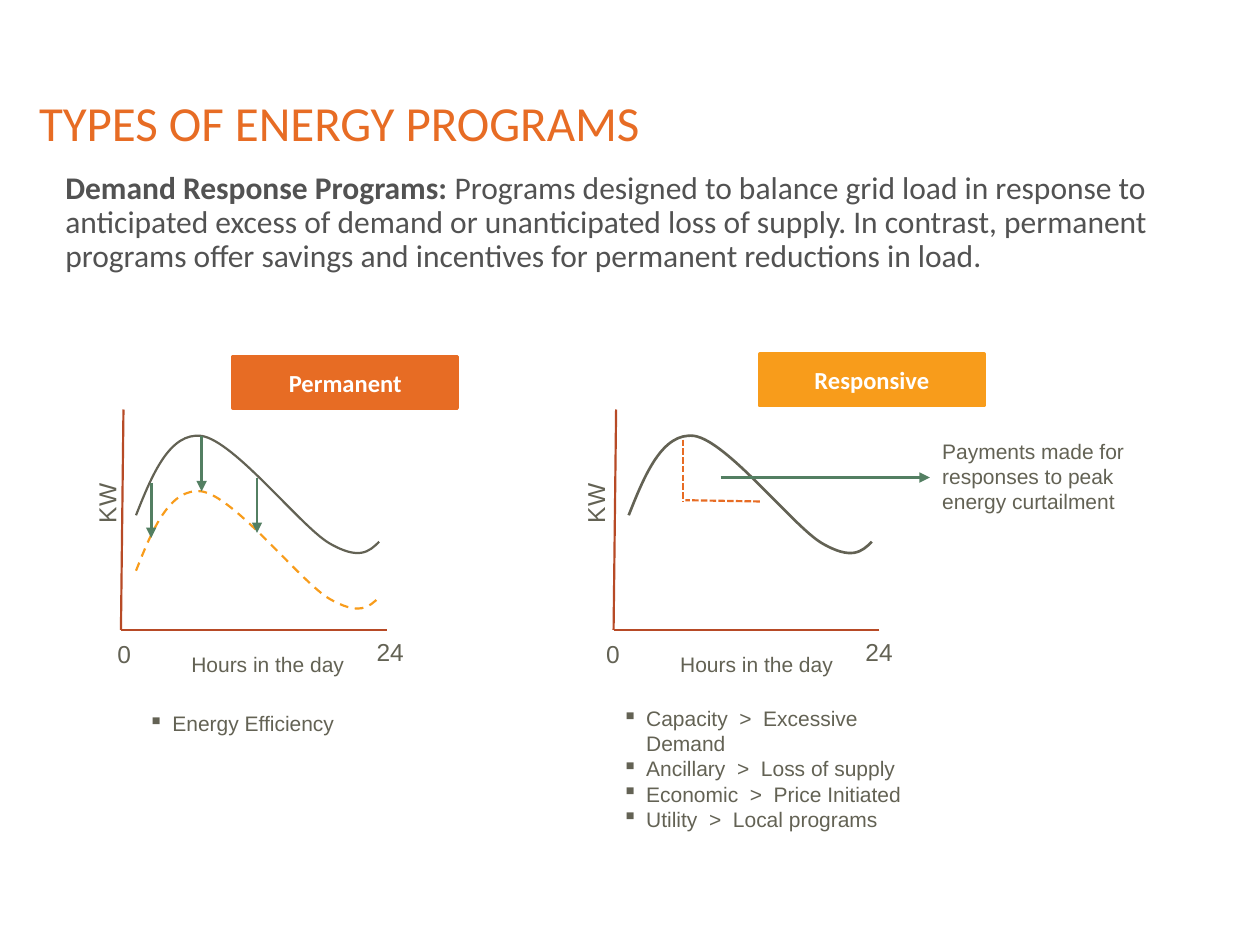
"""Build a slide that contrasts permanent and responsive energy programs."""
import pptx
import pptx.util
import pptx.dml.color
import pptx.enum.dml
import pptx.enum.shapes
import pptx.enum.text
import pptx.oxml.ns
from lxml import etree

Inches, Pt = pptx.util.Inches, pptx.util.Pt
RGB = pptx.dml.color.RGBColor
DASH = pptx.enum.dml.MSO_LINE
ALIGN = pptx.enum.text.PP_ALIGN
MIDDLE = pptx.enum.text.MSO_ANCHOR.MIDDLE
STRAIGHT = pptx.enum.shapes.MSO_CONNECTOR.STRAIGHT
RECT = pptx.enum.shapes.MSO_SHAPE.RECTANGLE
qn = pptx.oxml.ns.qn

ORANGE = RGB(0xE7, 0x6C, 0x24)
AMBER = RGB(0xF8, 0x9C, 0x1B)
RUST = RGB(0xB7, 0x4A, 0x26)
GREEN = RGB(0x53, 0x7F, 0x62)
OLIVE = RGB(0x63, 0x62, 0x54)
GRAY = RGB(0x52, 0x52, 0x52)
WHITE = RGB(0xFF, 0xFF, 0xFF)

HEAD = dict(name="Calibri", size=Pt(28), color=ORANGE)
BODY = dict(name="Calibri", size=Pt(18), color=GRAY, bold=False)
LEAD = {**BODY, "bold": True}
TAG = dict(name="Calibri", size=Pt(14), color=WHITE, bold=True)
NOTE = dict(name="Arial", size=Pt(12), color=OLIVE)
MARK = {**NOTE, "size": Pt(14)}

TITLE = "TYPES OF ENERGY PROGRAMS"
INTRO = [
    ("Demand Response Programs: ", LEAD),
    ("Programs designed to balance grid load in response to anticipated excess "
     "of demand or unanticipated loss of supply. In contrast, permanent programs "
     "offer savings and incentives for permanent reductions in load.", BODY),
]
TAGS = [("Permanent", (1.85, 2.83, 1.78, 0.41), ORANGE),
        ("Responsive", (6.03, 2.81, 1.78, 0.41), AMBER)]
LABELS = [("KW", (0.55, 3.79, 0.59, 0.33), MARK, 270),
          ("Hours in the day", (1.42, 5.12, 1.62, 0.3), NOTE, 0),
          ("0", (0.87, 5.02, 0.16, 0.33), MARK, 0),
          ("24", (2.89, 5.01, 0.43, 0.33), MARK, 0)]
AXES = [((0.98, 3.25), (0.96, 5)), ((3.07, 5), (0.96, 5))]
CURVE = [(1.08, 4.09), (1.21, 3.76), (1.35, 3.43), (1.6, 3.46), (1.86, 3.5),
         (2.38, 4.17), (2.61, 4.31), (2.85, 4.45), (2.93, 4.38), (3.01, 4.3)]
FRAME = (1.08, 3.46, 1.94, 0.93)
DROPS = [(1.2, 3.83), (1.6, 3.46), (2.04, 3.79)]
CUTS = [((5.42, 3.49), (5.42, 3.98)), ((6.03, 3.98), (5.44, 3.97))]
LISTS = [((1.08, 5.59, 1.76, 0.71), 1, ["Energy Efficiency"]),
         ((4.84, 5.55, 4.89, 1.11), 2,
          ["Capacity  >  Excessive Demand", "Ancillary  >  Loss of supply",
           "Economic  >  Price Initiated", "Utility  >  Local programs"])]
PAY = "Payments made for responses to peak energy curtailment"
SHIFT, STEP, FALL = 3.91, 3.88, 0.44

deck = pptx.Presentation()
deck.slide_width, deck.slide_height = Inches(10), Inches(7.5)
slide = deck.slides.add_slide(deck.slide_layouts[5])
shapes = slide.shapes


def write(para, text, look):
    run = para.add_run()
    run.text = text
    for key, value in look.items():
        if key == "color":
            run.font.color.rgb = value
        else:
            setattr(run.font, key, value)


def text_box(place, look, *lines):
    box = shapes.add_textbox(*map(Inches, place))
    frame = box.text_frame
    frame.word_wrap = True
    for i, line in enumerate(lines):
        para = frame.add_paragraph() if i else frame.paragraphs[0]
        write(para, line, look)
    return box


def pad(frame):
    for side in ("left", "top", "right", "bottom"):
        setattr(frame, "margin_" + side, Inches(0.1))


def stroke(line, color, width, dash=None):
    line.color.rgb = color
    line.width = Pt(width)
    if dash:
        line.dash_style = dash


def link(start, end, color, width, dash=None, arrow=False):
    wire = shapes.add_connector(STRAIGHT, *map(Inches, start + end))
    stroke(wire.line, color, width, dash)
    if arrow:
        tail = etree.SubElement(wire.line._get_or_add_ln(), qn("a:tailEnd"))
        tail.set("type", "triangle")
    etree.SubElement(wire._element.spPr, qn("a:effectLst"))
    return wire


def wave(dx, dy, color, width, dash=None):
    left, top, wide, high = FRAME
    pen = shapes.build_freeform(Inches(left + dx), Inches(top + dy))
    pen.add_line_segments([(Inches(left + dx + wide), Inches(top + dy + high))], close=False)
    shape = pen.convert_to_shape()
    track = shape._element.find(".//" + qn("a:path"))
    for part in list(track):
        track.remove(part)
    for i, (x, y) in enumerate(CURVE):
        if i % 3 < 2 and i < 2 or i % 3 == 1:
            group = etree.SubElement(track, qn("a:cubicBezTo" if i else "a:moveTo"))
        point = etree.SubElement(group, qn("a:pt"))
        point.set("x", str(Inches(x - left)))
        point.set("y", str(Inches(y - top)))
    shape.fill.background()
    shape.shadow.inherit = False
    stroke(shape.line, color, width, dash)


title = shapes.title
title.left, title.top, title.width, title.height = map(Inches, (0.21, 0.27, 8.62, 1.45))
title.text_frame.vertical_anchor = MIDDLE
pad(title.text_frame)
para = title.text_frame.paragraphs[0]
para.alignment, para.line_spacing = ALIGN.LEFT, 0.9
write(para, TITLE, HEAD)

intro = text_box((0.42, 1.27, 9.25, 5), BODY)
pad(intro.text_frame)
para = intro.text_frame.paragraphs[0]
para.line_spacing = 0.9
for text, look in INTRO:
    write(para, text, look)

for text, place, color in TAGS:
    tag = shapes.add_shape(RECT, *map(Inches, place))
    tag.shadow.inherit = False
    tag.fill.solid()
    tag.fill.fore_color.rgb = color
    stroke(tag.line, color, 2)
    tag.text_frame.vertical_anchor = MIDDLE
    para = tag.text_frame.paragraphs[0]
    para.alignment = ALIGN.CENTER
    write(para, text, TAG)

for side, width in enumerate((1.25, 1.5)):
    dx = side * SHIFT
    for (x1, y1), (x2, y2) in AXES:
        link((x1 + dx, y1), (x2 + dx, y2), RUST, 1.25)
    wave(dx, 0, OLIVE, width)
    for text, (x, y, w, h), look, turn in LABELS:
        text_box((x + side * STEP, y, w, h), look, text).rotation = turn

wave(0, FALL, AMBER, 1.25, DASH.DASH)
for x, y in DROPS:
    link((x, y), (x, y + FALL), GREEN, 1.5, arrow=True)
for start, end in CUTS:
    link(start, end, ORANGE, 1.25, DASH.SQUARE_DOT)

for place, count, items in LISTS:
    box = text_box(place, NOTE, *items)
    box.text_frame._txBody.bodyPr.set("numCol", str(count))
    for para in box.text_frame.paragraphs:
        props = para._p.get_or_add_pPr()
        props.set("marL", str(Inches(0.19)))
        props.set("indent", str(-Inches(0.19)))
        etree.SubElement(props, qn("a:buChar")).set("char", "▪")

pay = text_box((7.38, 3.43, 1.9, 0.72), NOTE, PAY)
link((5.72, 3.79), (7.38, 3.79), GREEN, 2, arrow=True).end_connect(pay, 1)

deck.save("out.pptx")
